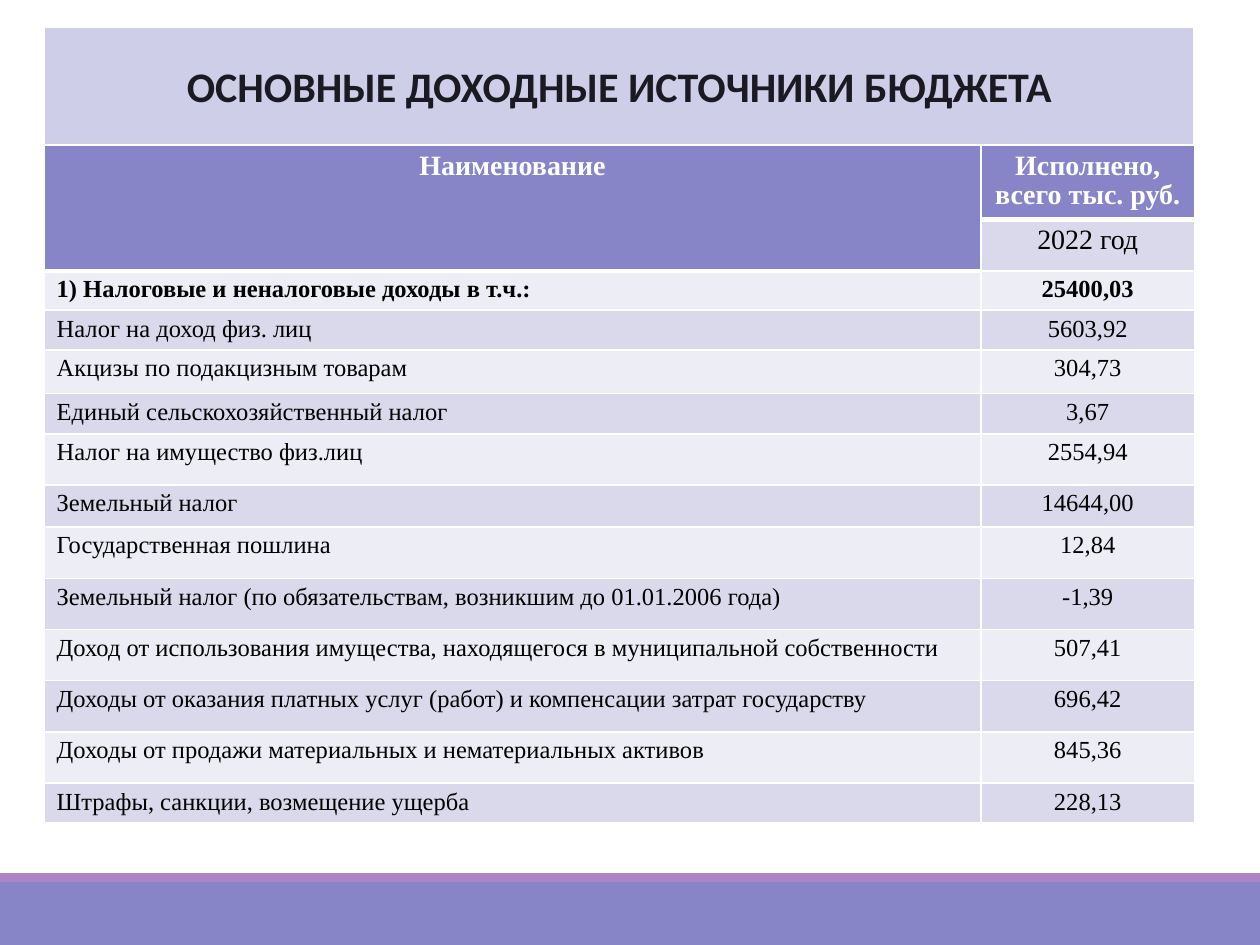
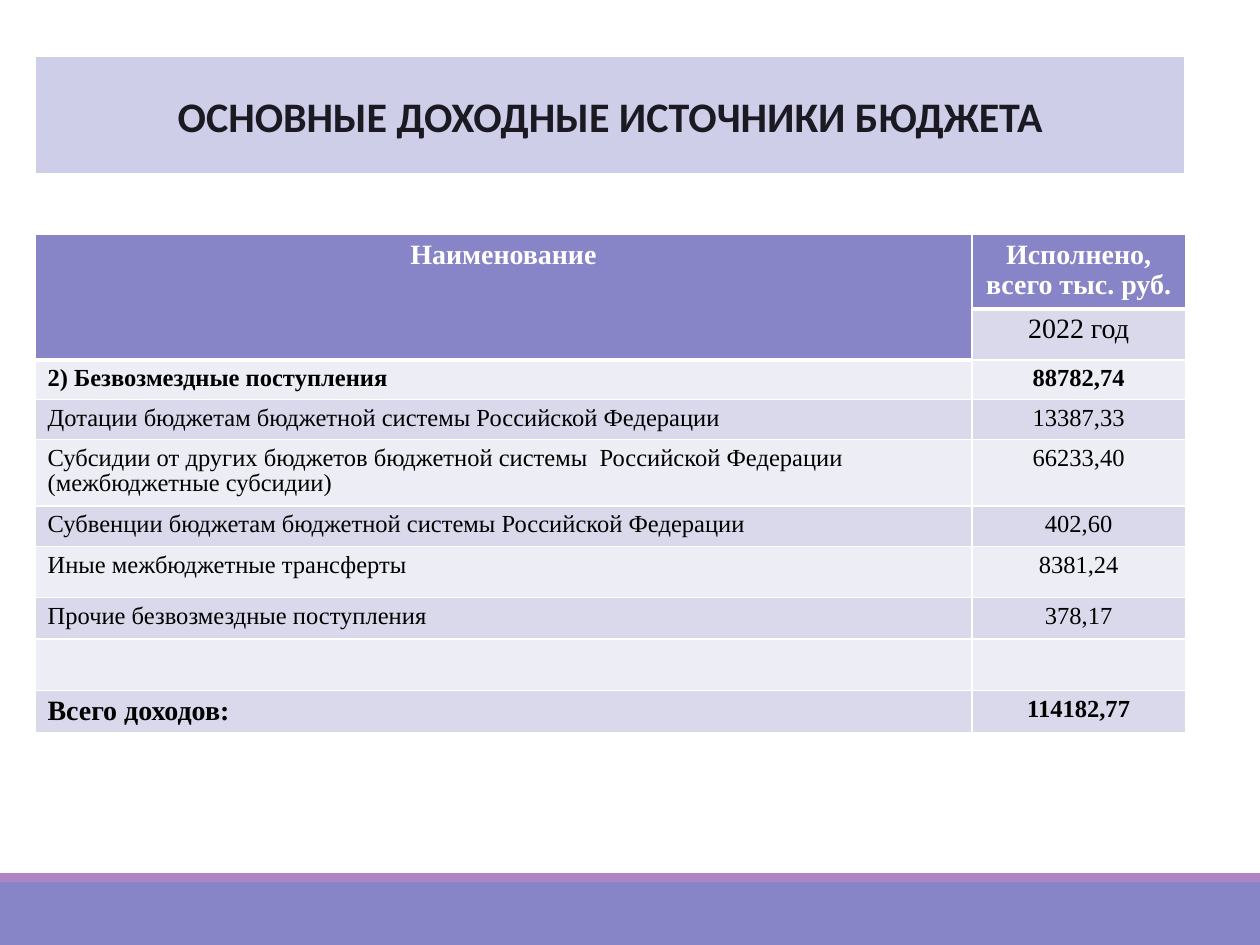
from dataclasses import dataclass
from lxml.etree import SubElement
from pptx import Presentation
from pptx.dml.color import RGBColor
from pptx.enum.shapes import MSO_SHAPE
from pptx.enum.text import MSO_ANCHOR, PP_ALIGN
from pptx.oxml import parse_xml
from pptx.oxml.ns import nsdecls, qn
from pptx.util import Pt


@dataclass(frozen=True)
class Theme:
    violet: str = "8784C7"
    purple: str = "AD84C6"
    lavender: str = "CFCEE9"
    dark_row: str = "D9D9EB"
    light_row: str = "EDEDF5"
    white: str = "FFFFFF"
    black: str = "000000"
    ink: str = "1B1A22"
    title_font: str = "Calibri"
    table_font: str = "Times New Roman"
    title_size: int = 24
    head_size: int = 16
    body_size: int = 14


THEME = Theme()
TITLE = "ОСНОВНЫЕ ДОХОДНЫЕ ИСТОЧНИКИ БЮДЖЕТА"
COLUMN_WIDTHS = (535.4, 122)
HEADER = [
    (42.5, "Наименование", "Исполнено, всего тыс. руб."),
    (29.3, "", "2022 год"),
]
TAX_INCOME = [
    (22.5, "1) Налоговые и неналоговые доходы в т.ч.:", "25400,03"),
    (22.7, "Налог на доход физ. лиц", "5603,92"),
    (25, "Акцизы по подакцизным товарам", "304,73"),
    (23, "Единый сельскохозяйственный налог", "3,67"),
    (29.3, "Налог на имущество физ.лиц", "2554,94"),
    (24, "Земельный налог", "14644,00"),
    (29.3, "Государственная пошлина", "12,84"),
    (29.3, "Земельный налог (по обязательствам, возникшим до 01.01.2006 года)", "-1,39"),
    (29.3, "Доход от использования имущества, находящегося в муниципальной собственности", "507,41"),
    (29.3, "Доходы от оказания платных услуг (работ) и компенсации затрат государству", "696,42"),
    (29.3, "Доходы от продажи материальных и нематериальных активов", "845,36"),
    (22.5, "Штрафы, санкции, возмещение ущерба", "228,13"),
]
GRANTS = [
    (22.5, "2) Безвозмездные поступления", "88782,74"),
    (22.8, "Дотации бюджетам бюджетной системы Российской Федерации", "13387,33"),
    (38, "Субсидии от других бюджетов бюджетной системы  Российской Федерации (межбюджетные субсидии)", "66233,40"),
    (23.2, "Субвенции бюджетам бюджетной системы Российской Федерации", "402,60"),
    (29.3, "Иные межбюджетные трансферты", "8381,24"),
    (23.7, "Прочие безвозмездные поступления", "378,17"),
    (29.3, "", ""),
    (24.5, "Всего доходов:", "114182,77"),
]
PAGES = [(25.2, 15.1, 83, TAX_INCOME), (20, 32, 134, GRANTS)]


def write(frame, text, font, size, color, bold, align):
    para = frame.paragraphs[0]
    para.alignment = align
    span = para.add_run()
    span.text = text
    span.font.name = font
    span.font.size = Pt(size)
    span.font.bold = bold
    span.font.color.rgb = RGBColor.from_string(color)
    return para


def set_borders(cell, top, bottom):
    properties = cell._tc.get_or_add_tcPr()
    for position, (edge, width) in enumerate(
        (("lnL", 1), ("lnR", 1), ("lnT", top), ("lnB", bottom))
    ):
        line = parse_xml(f'<a:{edge} {nsdecls("a")} w="{Pt(width)}"/>')
        fill = SubElement(line, qn("a:solidFill"))
        SubElement(fill, qn("a:srgbClr"), val=THEME.white)
        properties.insert(position, line)


deck = Presentation()
deck.slide_width = Pt(720)
deck.slide_height = Pt(540)
layout = deck.slide_layouts[5]
pages = [deck.slides.add_slide(layout) for _ in PAGES]

master_tree = deck.slide_master.element.cSld.spTree
for position, (top, height, color) in enumerate(
    ((504, 36, THEME.violet), (499, 5, THEME.purple)), start=2
):
    band = pages[0].shapes.add_shape(MSO_SHAPE.RECTANGLE, 0, Pt(top), deck.slide_width, Pt(height))
    band.shadow.inherit = False
    band.fill.solid()
    band.fill.fore_color.rgb = RGBColor.from_string(color)
    band.line.fill.background()
    master_tree.insert(position, band._element)

for page, (left, title_top, table_top, entries) in zip(pages, PAGES):
    title = page.shapes.title
    title.left, title.top = Pt(left), Pt(title_top)
    title.width, title.height = Pt(sum(COLUMN_WIDTHS)), Pt(67.7)
    title._element.spPr.append(
        parse_xml(f'<a:prstGeom {nsdecls("a")} prst="roundRect"><a:avLst/></a:prstGeom>')
    )
    title.fill.solid()
    title.fill.fore_color.rgb = RGBColor.from_string(THEME.lavender)
    title.line.color.rgb = RGBColor.from_string(THEME.white)
    title.line.width = Pt(1.25)
    title.text_frame.vertical_anchor = MSO_ANCHOR.MIDDLE
    write(title.text_frame, TITLE, THEME.title_font, THEME.title_size, THEME.ink, True, PP_ALIGN.CENTER)

    rows = HEADER + entries
    table = page.shapes.add_table(
        len(rows), 2, Pt(left), Pt(table_top),
        Pt(sum(COLUMN_WIDTHS)), Pt(sum(row[0] for row in rows)),
    ).table
    for column, width in zip(table.columns, COLUMN_WIDTHS):
        column.width = Pt(width)

    for row_index, (height, *texts) in enumerate(rows):
        table.rows[row_index].height = Pt(height)
        is_total = texts[0] == "Всего доходов:"
        for column_index, text in enumerate(texts):
            cell = table.cell(row_index, column_index)
            is_head = row_index + column_index <= 1
            is_large = row_index < 2 or (is_total and column_index == 0)
            stripe = THEME.dark_row if row_index % 2 else THEME.light_row
            cell.fill.solid()
            cell.fill.fore_color.rgb = RGBColor.from_string(THEME.violet if is_head else stripe)
            set_borders(cell, 3 if 1 <= row_index + column_index <= 2 and row_index else 1, 3 if is_head else 1)
            if text:
                para = write(
                    cell.text_frame, text, THEME.table_font,
                    THEME.head_size if is_large else THEME.body_size,
                    THEME.white if is_head else THEME.black,
                    is_head or row_index == 2 or is_total,
                    PP_ALIGN.CENTER if is_head or column_index else PP_ALIGN.LEFT,
                )
                para.line_spacing = 0.95
    table.cell(0, 0).merge(table.cell(1, 0))

deck.save("out.pptx")
